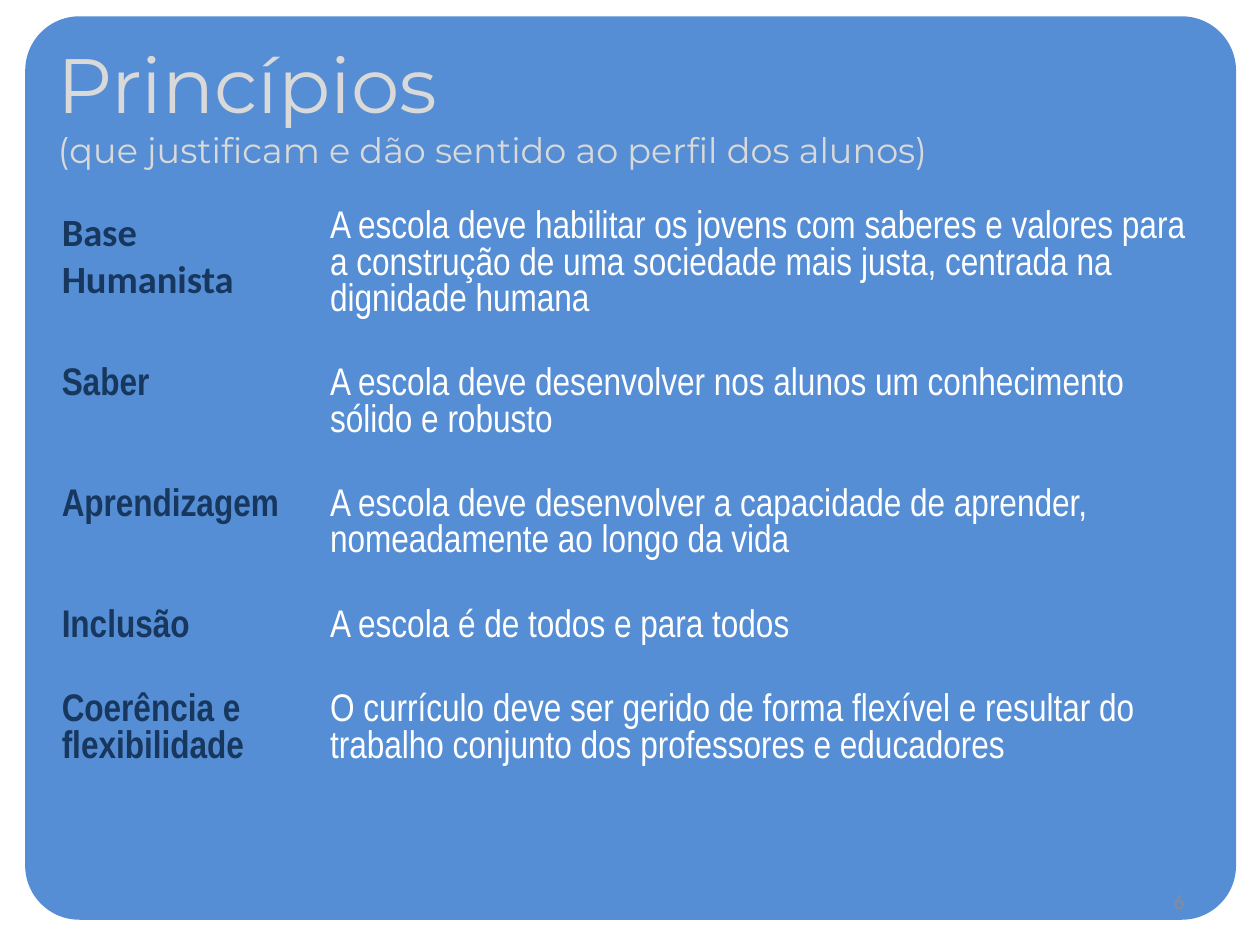
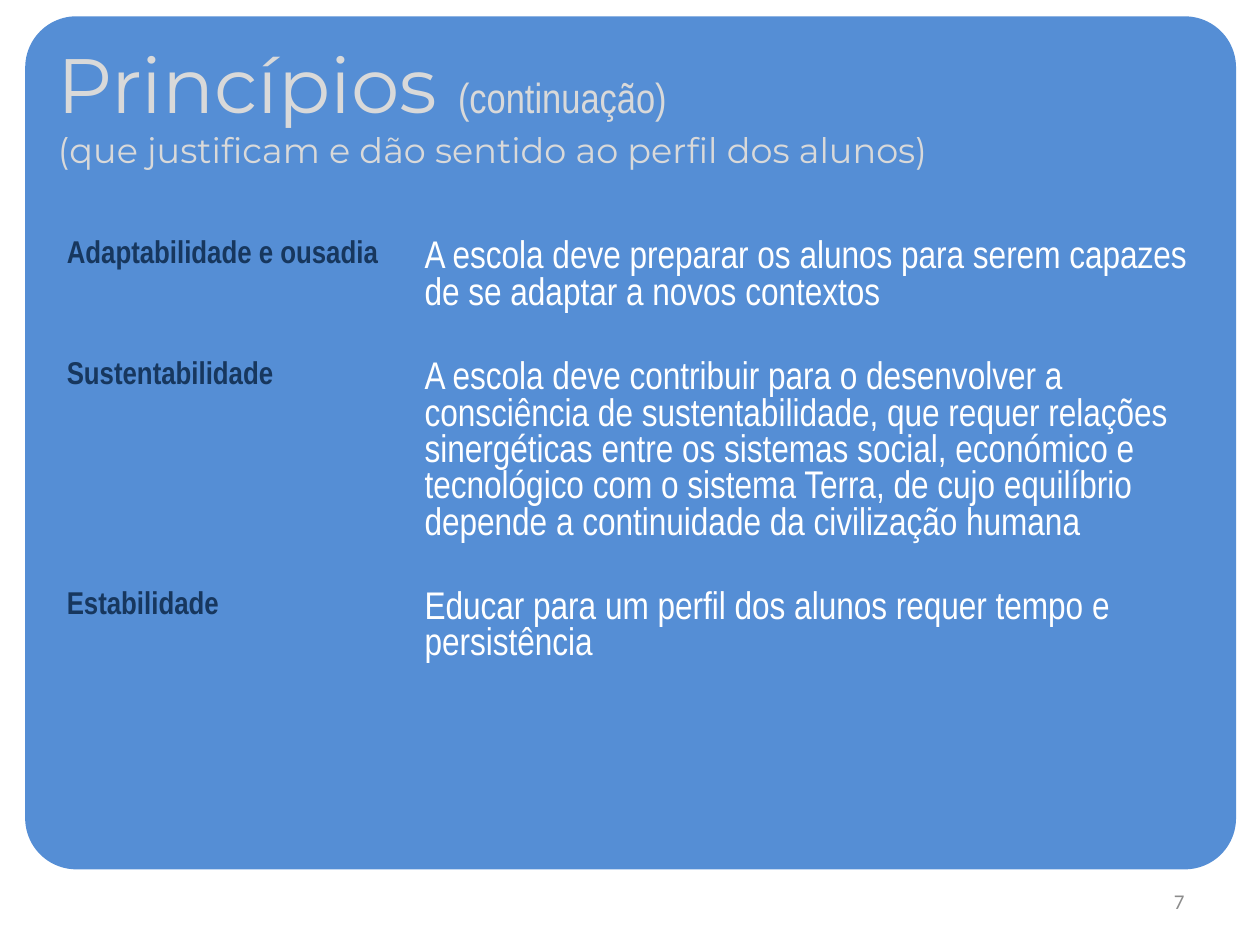
"""Build two slides that list the principles behind the student profile."""
from pptx import Presentation
from pptx.dml.color import RGBColor
from pptx.enum.shapes import MSO_SHAPE as Shape
from pptx.enum.text import MSO_ANCHOR as Anchor, MSO_AUTO_SIZE as AutoSize, PP_ALIGN as Align
from pptx.oxml.ns import qn
from pptx.util import Inches, Pt

BLUE = RGBColor(0x55, 0x8E, 0xD5)
NAVY = RGBColor(0x17, 0x37, 0x5E)
WHITE = RGBColor(0xFF, 0xFF, 0xFF)
LIGHT_GREY = RGBColor(0xD9, 0xD9, 0xD9)
GREY = RGBColor(0x8C, 0x8C, 0x8C)
TITLE_FONT, BODY_FONT, NUMBER_FONT = "Montserrat", "Arial Narrow", "Calibri"
NO_GRID_STYLE = "{2D5ABB26-0587-4C30-8999-92F81FD0307C}"
SUBTITLE = "(que justificam e dão sentido ao perfil dos alunos)"

PRINCIPLES = [
    ("Base Humanista", "A escola deve habilitar os jovens com saberes e valores para a "
     "construção de uma sociedade mais justa, centrada na dignidade humana"),
    ("Saber", "A escola deve desenvolver nos alunos um conhecimento sólido e robusto"),
    ("Aprendizagem", "A escola deve desenvolver a capacidade de aprender, nomeadamente "
     "ao longo da vida"),
    ("Inclusão", "A escola é de todos e para todos"),
    ("Coerência e flexibilidade", "O currículo deve ser gerido de forma flexível e resultar "
     "do trabalho conjunto dos professores e educadores"),
]
MORE_PRINCIPLES = [
    ("Adaptabilidade e ousadia", "A escola deve preparar os alunos para serem capazes de se "
     "adaptar a novos contextos"),
    ("Sustentabilidade", "A escola deve contribuir para o desenvolver a consciência de "
     "sustentabilidade, que requer relações sinergéticas entre os sistemas social, económico "
     "e tecnológico com o sistema Terra, de cujo equilíbrio depende a continuidade da "
     "civilização humana"),
    ("Estabilidade", "Educar para um perfil dos alunos requer tempo e persistência"),
]


def write(paragraph, text, size=22, font=BODY_FONT, color=WHITE, bold=False, align=Align.LEFT,
          line_spacing=None):
    """Add a formatted run to a paragraph."""
    paragraph.alignment = align
    paragraph.line_spacing = line_spacing
    run = paragraph.add_run()
    run.text = text
    run.font.size = Pt(size)
    run.font.name = font
    run.font.bold = bold
    run.font.color.rgb = color


class Deck:
    """Holds the presentation, its style and the current slide."""

    def __init__(self):
        self.presentation = Presentation()
        self.presentation.slide_width = Inches(10)
        self.presentation.slide_height = Inches(7.5)
        self.slide = None

    def add_slide(self, panel_height, number, title_note=None):
        """Start a slide with its panel, title and number."""
        layout = self.presentation.slide_layouts[5]
        self.slide = self.presentation.slides.add_slide(layout)
        self.add_panel(panel_height)
        self.set_title(title_note)
        self.add_number(number)

    def add_panel(self, height):
        """Put the rounded blue panel behind everything else."""
        panel = self.slide.shapes.add_shape(
            Shape.ROUNDED_RECTANGLE, Inches(0.2), Inches(0.13), Inches(9.61), Inches(height))
        panel.adjustments[0] = 0.06
        panel.shadow.inherit = False
        panel.fill.solid()
        panel.fill.fore_color.rgb = BLUE
        panel.line.fill.background()
        self.slide.shapes.element.insert(2, panel.element)

    def set_title(self, note):
        """Write the title, an optional note and the subtitle."""
        title = self.slide.shapes.title
        title.left, title.top = Inches(0.46), Inches(0.29)
        title.width, title.height = Inches(9), Inches(1.2)
        frame = title.text_frame
        frame.auto_size = AutoSize.NONE
        frame.word_wrap = True
        frame.vertical_anchor = Anchor.TOP
        frame.margin_left = frame.margin_right = frame.margin_top = frame.margin_bottom = 0
        heading = frame.paragraphs[0]
        write(heading, "Princípios " if note else "Princípios", 44, TITLE_FONT, LIGHT_GREY)
        if note:
            write(heading, note, 24, color=LIGHT_GREY)
        write(frame.add_paragraph(), SUBTITLE, 20, TITLE_FONT, LIGHT_GREY)

    def add_number(self, number):
        """Write the slide number at the lower right."""
        box = self.slide.shapes.add_textbox(
            Inches(7.17), Inches(6.95), Inches(2.33), Inches(0.4))
        frame = box.text_frame
        frame.word_wrap = True
        frame.vertical_anchor = Anchor.MIDDLE
        write(frame.paragraphs[0], str(number), 12, NUMBER_FONT, GREY, align=Align.RIGHT)

    def add_principles(self, principles, left, top, widths, name_size=22, first_font=BODY_FONT):
        """Add a plain table of principle names and explanations."""
        row_height = 0.41
        body_spacing = Pt(20.8)
        frame = self.slide.shapes.add_table(
            len(principles), 2, Inches(left), Inches(top),
            Inches(sum(widths)), Inches(row_height * len(principles)))
        table = frame.table
        table.first_row = table.horz_banding = False
        table._tbl.tblPr.find(qn("a:tableStyleId")).text = NO_GRID_STYLE
        for column, width in zip(table.columns, widths):
            column.width = Inches(width)
        for index, (row, (name, explanation)) in enumerate(zip(table.rows, principles)):
            row.height = Inches(row_height)
            for cell in row.cells:
                cell.fill.background()
                cell.margin_bottom = Inches(0.33)
            name_cell, explanation_cell = row.cells
            name_font = BODY_FONT if index else first_font
            name_spacing = body_spacing if (name_size, name_font) == (22, BODY_FONT) else None
            write(name_cell.text_frame.paragraphs[0], name, name_size, name_font, NAVY,
                  bold=True, line_spacing=name_spacing)
            write(explanation_cell.text_frame.paragraphs[0], explanation,
                  line_spacing=body_spacing)


def main():
    """Build and save both slides."""
    deck = Deck()
    deck.add_slide(7.17, 6)
    deck.add_principles(PRINCIPLES, 0.39, 1.62, (2.13, 7.09), first_font="Calibri")
    deck.add_slide(6.77, 7, "(continuação)")
    deck.add_principles(MORE_PRINCIPLES, 0.43, 1.86, (2.84, 6.37), name_size=18)
    deck.presentation.save("out.pptx")


if __name__ == "__main__":
    main()
